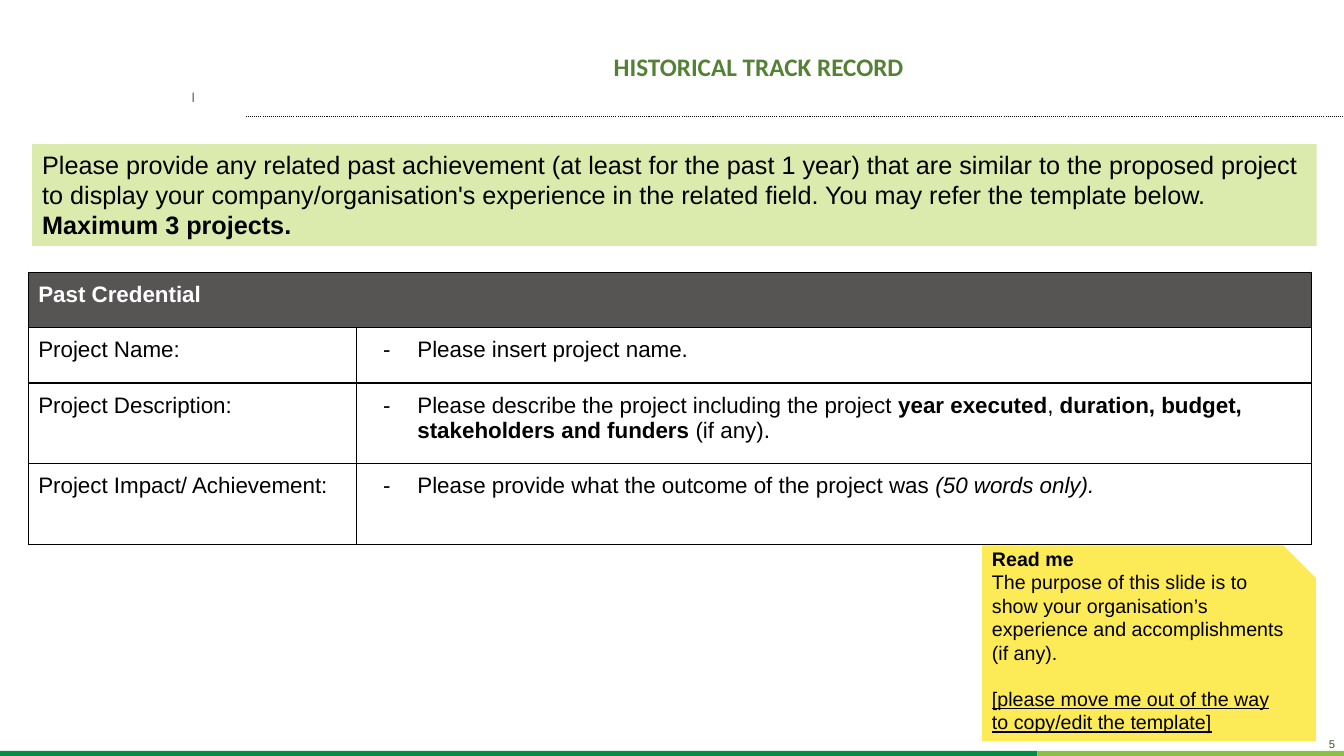
"""Builds the Historical Track Record template slide."""
from lxml import etree
from pptx import Presentation
from pptx.dml.color import RGBColor
from pptx.enum.dml import MSO_LINE
from pptx.enum.shapes import MSO_CONNECTOR, MSO_SHAPE
from pptx.enum.text import MSO_ANCHOR, MSO_AUTO_SIZE, PP_ALIGN
from pptx.oxml.ns import qn
from pptx.util import Inches, Pt

RECTANGLE, SNIPPED = MSO_SHAPE.RECTANGLE, MSO_SHAPE.SNIP_1_RECTANGLE
STRAIGHT, DOTTED = MSO_CONNECTOR.STRAIGHT, MSO_LINE.ROUND_DOT
TOP, MIDDLE = MSO_ANCHOR.TOP, MSO_ANCHOR.MIDDLE
LEFT, CENTER, RIGHT = PP_ALIGN.LEFT, PP_ALIGN.CENTER, PP_ALIGN.RIGHT
NO_AUTOSIZE = MSO_AUTO_SIZE.NONE

BLACK = RGBColor(0x00, 0x00, 0x00)
WHITE = RGBColor(0xFF, 0xFF, 0xFF)
TITLE_GREEN = RGBColor(0x54, 0x81, 0x35)
NUMBER_GREEN = RGBColor(0x38, 0x56, 0x23)
FOOTER_GREEN = RGBColor(0x00, 0x90, 0x44)
FOOTER_LIME = RGBColor(0x88, 0xC2, 0x3E)
PALE_GREEN = RGBColor(0xDB, 0xEB, 0xAE)
NOTE_YELLOW = RGBColor(0xFD, 0xEA, 0x57)
HEADER_GREY = RGBColor(0x57, 0x54, 0x54)
TICK_GREY = RGBColor(0x41, 0x40, 0x42)
RULE_BLACK = RGBColor(0x0C, 0x0C, 0x0C)


def add_block(kind, left, top, width, height, color):
    block = slide.shapes.add_shape(kind, Inches(left), Inches(top), Inches(width), Inches(height))
    block.shadow.inherit = False
    block.fill.solid()
    block.fill.fore_color.rgb = color
    block.line.fill.background()
    return block


def write_runs(paragraph, pieces, size, color=BLACK, align=LEFT, font="Arial"):
    paragraph.alignment = align
    for text, style in pieces:
        run = paragraph.add_run()
        run.text = text
        run.font.name = font
        run.font.size = Pt(size)
        run.font.color.rgb = color
        run.font.bold = style == "bold"
        run.font.italic = style == "italic"
        run.font.underline = style == "underline"


presentation = Presentation()
presentation.slide_width = Inches(13.33)
presentation.slide_height = Inches(7.5)
slide = presentation.slides.add_slide(presentation.slide_layouts[5])

add_block(RECTANGLE, 0, 7.45, 10.29, 0.05, FOOTER_GREEN)
add_block(RECTANGLE, 10.29, 7.45, 3.04, 0.05, FOOTER_LIME)
add_block(RECTANGLE, 1.91, 0.92, 0.01, 0.09, TICK_GREY)

title_rule = slide.shapes.add_connector(STRAIGHT, Inches(2.44), Inches(1.16), Inches(13.33), Inches(1.16))
title_rule.line.color.rgb = RULE_BLACK
title_rule.line.width = Pt(0.75)
title_rule.line.dash_style = DOTTED
etree.SubElement(title_rule.line._get_or_add_ln().getparent(), qn("a:effectLst"))

page_number = slide.shapes.add_textbox(Inches(10.38), Inches(7.29), Inches(2.96), Inches(0.18))
page_number.text_frame.word_wrap = True
page_number.text_frame.vertical_anchor = MIDDLE
write_runs(page_number.text_frame.paragraphs[0], [("5", "")], 8, NUMBER_GREEN, RIGHT)

title = slide.shapes.title
title.left, title.top, title.width, title.height = Inches(2.61), Inches(0.49), Inches(9.33), Inches(0.32)
heading = title.text_frame
heading.auto_size = NO_AUTOSIZE
heading.vertical_anchor = MIDDLE
heading.margin_left, heading.margin_top = Inches(0.5), Inches(0.01)
heading.margin_right = heading.margin_bottom = 0
write_runs(heading.paragraphs[0], [("HISTORICAL TRACK RECORD", "bold")], 18, TITLE_GREEN, CENTER, "Calibri")

instructions = add_block(RECTANGLE, 0.32, 1.43, 12.74, 1.01, PALE_GREEN).text_frame
instructions.word_wrap = True
instructions.vertical_anchor = TOP
write_runs(instructions.paragraphs[0], [
    ("Please provide any related past achievement (at least for the past 1 year) that are similar to the "
     "proposed project to display your company/organisation's experience in the related field. "
     "You may refer the template below. ", ""),
    ("Maximum 3 projects.", "bold"),
], 18)

credential_rows = [
    (0.55, "Past Credential", []),
    (0.55, "Project Name:", [("Please insert project name.", "")]),
    (0.8, "Project Description:", [
        ("Please describe the project including the project ", ""),
        ("year executed", "bold"),
        (", ", ""),
        ("duration, budget, stakeholders and funders", "bold"),
        (" (if any).", ""),
    ]),
    (0.8, "Project Impact/ Achievement:", [
        ("Please provide what the outcome of the project was ", ""),
        ("(50 words only).", "italic"),
    ]),
]
credentials = slide.shapes.add_table(
    len(credential_rows), 2, Inches(0.28), Inches(2.7), Inches(12.74), Inches(2.7)).table
credentials.first_row = credentials.horz_banding = False
credentials.columns[0].width = Inches(3.26)
credentials.columns[1].width = Inches(9.47)
credentials.cell(0, 0).merge(credentials.cell(0, 1))

for index, (height, label, guidance) in enumerate(credential_rows):
    credentials.rows[index].height = Inches(height)
    is_header = index == 0
    for cell in credentials.rows[index].cells:
        cell.margin_left = cell.margin_right = cell.margin_top = cell.margin_bottom = Inches(0.1)
        properties = cell._tc.get_or_add_tcPr()
        for side in ("a:lnL", "a:lnR", "a:lnT", "a:lnB"):
            border = etree.SubElement(properties, qn(side), w=str(Pt(1)))
            border_fill = etree.SubElement(border, qn("a:solidFill"))
            etree.SubElement(border_fill, qn("a:srgbClr"), val=str(BLACK))
        if is_header:
            cell.fill.solid()
            cell.fill.fore_color.rgb = HEADER_GREY
        else:
            cell.fill.background()
    write_runs(credentials.cell(index, 0).text_frame.paragraphs[0],
               [(label, "bold" if is_header else "")], 16, WHITE if is_header else BLACK)
    if guidance:
        guidance_line = credentials.cell(index, 1).text_frame.paragraphs[0]
        bullet = guidance_line._p.get_or_add_pPr()
        bullet.set("marL", str(Inches(0.5)))
        bullet.set("indent", str(Inches(-0.34)))
        etree.SubElement(bullet, qn("a:buFont"), typeface="Arial")
        etree.SubElement(bullet, qn("a:buChar"), char="-")
        write_runs(guidance_line, guidance, 16)

sticky_note = add_block(SNIPPED, 9.74, 5.41, 3.31, 1.94, NOTE_YELLOW)
sticky_note.adjustments[0] = 0.167
reminder = sticky_note.text_frame
reminder.word_wrap = True
reminder.vertical_anchor = MIDDLE
reminder.margin_left = reminder.margin_right = reminder.margin_top = Inches(0.1)
reminder.margin_bottom = Inches(0.32)
reminder_lines = [
    ("Read me", "bold", 0),
    ("The purpose of this slide is to show your organisation’s experience and accomplishments (if any).", "", 0),
    ("[please move me out of the way to copy/edit the template]", "underline", 16),
]
for index, (text, style, gap) in enumerate(reminder_lines):
    paragraph = reminder.add_paragraph() if index else reminder.paragraphs[0]
    if gap:
        paragraph.space_before = Pt(gap)
    write_runs(paragraph, [(text, style)], 14)

presentation.save("out.pptx")
